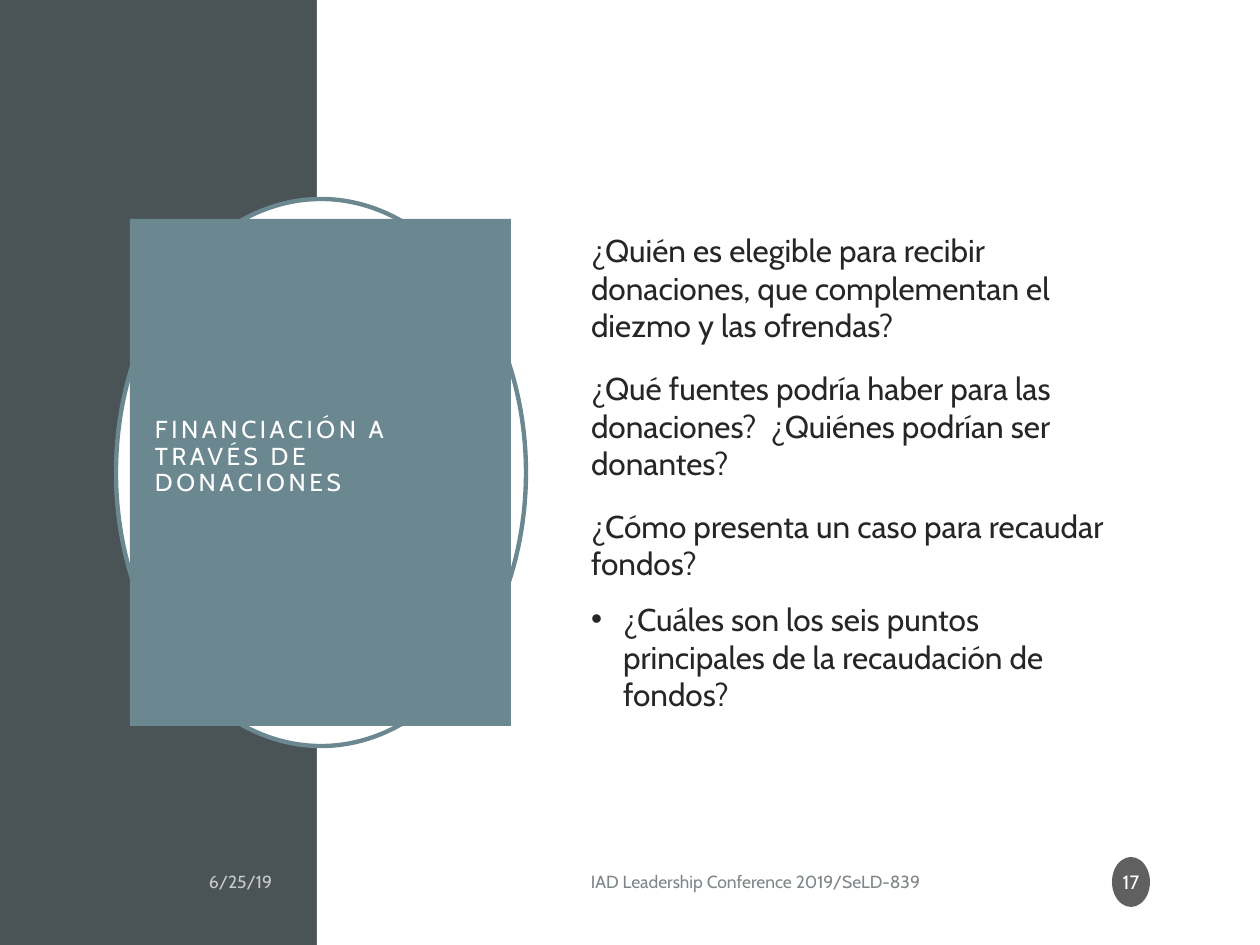
"""Build a slide on funding through donations, with a title panel and questions."""
import lxml.etree
import pptx
import pptx.dml.color
import pptx.enum.shapes
import pptx.enum.text
import pptx.oxml.ns
import pptx.util

PX = 914400 / 126
THEME = {
    "font": "Cabin", "slate": "4A5356", "teal": "6B8891", "white": "FFFFFF",
    "ink": "262626", "badge": "1D1D1D", "alpha": 70000,
    "title": 14, "body": 18, "foot": 10, "num": 11,
}
KIND = pptx.enum.shapes.MSO_SHAPE
ALIGN = pptx.enum.text.PP_ALIGN
qn = pptx.oxml.ns.qn


def draw(kind, box, fill, line=None):
    form = slide.shapes.add_shape(kind, *[round(n * PX) for n in box])
    form.shadow.inherit = False
    form.fill.solid()
    form.fill.fore_color.rgb = pptx.dml.color.RGBColor.from_string(THEME[fill])
    if line:
        form.line.color.rgb = pptx.dml.color.RGBColor.from_string(THEME[line])
        form.line.width = pptx.util.Pt(2.5)
    else:
        form.line.fill.background()
    return form


def write(form, lines, size, color, align=ALIGN.LEFT, inset=(13, 6, 13, 6), faint=False):
    frame = form.text_frame
    frame.word_wrap = True
    frame.vertical_anchor = pptx.enum.text.MSO_ANCHOR.MIDDLE
    for side, gap in zip(("left", "top", "right", "bottom"), inset):
        setattr(frame, "margin_" + side, round(gap * PX))
    for i, (text, before, mark) in enumerate(lines):
        para = frame.paragraphs[0] if i == 0 else frame.add_paragraph()
        para.text = text
        para.alignment = align
        if before:
            para.space_before = pptx.util.Pt(before)
        if mark:
            props = para._p.get_or_add_pPr()
            props.set("marL", str(round(32 * PX)))
            props.set("indent", str(round(-32 * PX)))
            lxml.etree.SubElement(props, qn("a:buFont")).set("typeface", "Arial")
            lxml.etree.SubElement(props, qn("a:buChar")).set("char", mark)
        para.font.name = THEME["font"]
        para.font.size = pptx.util.Pt(THEME[size])
        para.font.color.rgb = pptx.dml.color.RGBColor.from_string(THEME[color])
        if faint:
            tint = next(para._p.iter(qn("a:srgbClr")))
            lxml.etree.SubElement(tint, qn("a:alpha")).set("val", str(THEME["alpha"]))
    return frame


deck = pptx.Presentation()
deck.slide_width = round(1260 * PX)
deck.slide_height = round(945 * PX)
slide = deck.slides.add_slide(deck.slide_layouts[6])

draw(KIND.RECTANGLE, (0, 0, 317, 945), "slate")
draw(KIND.RECTANGLE, (317, 0, 943, 945), "white")
draw(KIND.OVAL, (116, 199, 410, 547), "white", "teal")

panel = draw(KIND.RECTANGLE, (130, 219, 381, 507), "teal")
title = write(panel, [("FINANCIACIÓN A TRAVÉS DE DONACIONES", 0, None)],
              "title", "white", inset=(25, 25, 25, 55))
head = title.paragraphs[0]
head.line_spacing = 0.9
next(head._p.iter(qn("a:defRPr"))).set("spc", "200")

asks = [
    ("¿Quién es elegible para recibir donaciones, que complementan el diezmo y las ofrendas?", 0, None),
    ("¿Qué fuentes podría haber para las donaciones?  ¿Quiénes podrían ser donantes?", 14, None),
    ("¿Cómo presenta un caso para recaudar fondos?", 14, None),
    ("¿Cuáles son los seis puntos principales de la recaudación de fondos?", 10, "•"),
]
notes = [
    ((578, 193, 550, 558), asks, "body", "ink", ALIGN.LEFT, False),
    ((49, 859, 236, 44), [("6/25/19", 0, None)], "foot", "white", ALIGN.RIGHT, True),
    ((578, 859, 502, 44), [("IAD Leadership Conference 2019/SeLD-839", 0, None)],
     "foot", "slate", ALIGN.LEFT, True),
]
for box, lines, size, color, align, faint in notes:
    area = slide.shapes.add_textbox(*[round(n * PX) for n in box])
    write(area, lines, size, color, align, faint=faint)

badge = draw(KIND.OVAL, (1112, 857, 38, 50), "badge")
tint = next(badge._element.spPr.iter(qn("a:srgbClr")))
lxml.etree.SubElement(tint, qn("a:alpha")).set("val", str(THEME["alpha"]))
write(badge, [("17", 0, None)], "num", "white", ALIGN.CENTER, (2, 6, 2, 6))

deck.save("out.pptx")
